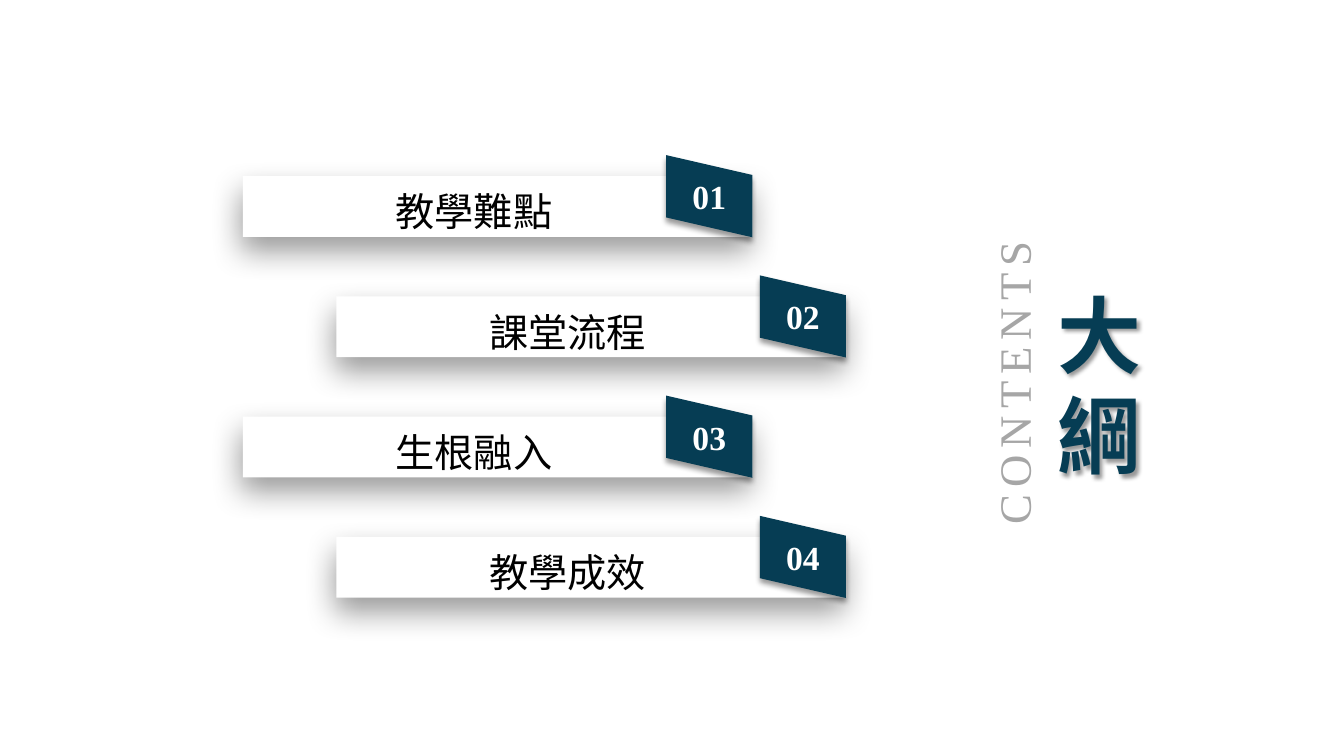
from lxml.etree import SubElement as Sub
from pptx import Presentation
from pptx.dml.color import RGBColor
from pptx.enum.shapes import MSO_SHAPE as Kind
from pptx.enum.text import MSO_ANCHOR as Anchor, PP_ALIGN as Align
from pptx.oxml.ns import qn
from pptx.util import Cm, Pt

NAVY = RGBColor(0x06, 0x3D, 0x54)
WHITE = RGBColor(0xFF, 0xFF, 0xFF)
BLACK = RGBColor(0, 0, 0)
GRAY = RGBColor(0xA6, 0xA6, 0xA6)
SERIF = "Times New Roman"


def write(shape, text, face, size, color, bold=False, align=Align.CENTER):
    """Fill the shape with middle-anchored text in one style."""
    frame = shape.text_frame
    frame.text = text
    frame.vertical_anchor = Anchor.MIDDLE
    for para in frame.paragraphs:
        para.alignment = align
        for run in para.runs:
            font = run.font
            font.size, font.bold, font.name = Pt(size), bold, face
            font.color.rgb = color
            Sub(run._r.get_or_add_rPr(), qn("a:ea"), typeface=face)
    return frame


def shade(shape, blur, dist, angle):
    """Give the shape a black outer shadow at 40 % opacity."""
    shape.shadow.inherit = False
    effect = shape._element.spPr.find(qn("a:effectLst"))
    outer = Sub(effect, qn("a:outerShdw"), blurRad=str(Pt(blur)),
                dist=str(Pt(dist)), dir=str(angle * 60000),
                algn="t", rotWithShape="0")
    tint = Sub(outer, qn("a:srgbClr"), val="000000")
    Sub(tint, qn("a:alpha"), val="40000")


deck = Presentation()
deck.slide_width, deck.slide_height = Cm(33.87), Cm(19.05)
slide = deck.slides.add_slide(deck.slide_layouts[6])

# Agenda bars, every second one indented
topics = ["教學難點", "課堂流程", "生根融入", "教學成效"]
for i, topic in enumerate(topics):
    left, top = 6.12 + 2.36 * (i % 2), 4.44 + 3.03 * i
    group = slide.shapes.add_group_shape()

    bar = group.shapes.add_shape(Kind.RECTANGLE, Cm(left), Cm(top), Cm(12.85), Cm(1.53))
    bar.fill.solid()
    bar.fill.fore_color.rgb = WHITE
    bar.line.fill.background()
    shade(bar, 22, 10, 101)
    frame = write(bar, topic, "Noto Sans CJK TC", 28, BLACK)
    frame.margin_left, frame.margin_right = Cm(0.3), Cm(1.5)
    frame.margin_top = frame.margin_bottom = 0
    frame.paragraphs[0].line_spacing = 1.2

    x, y = left + 10.67, top - 0.53
    pen = group.shapes.build_freeform(Cm(x), Cm(y))
    pen.add_line_segments([(Cm(x + dx), Cm(y + dy)) for dx, dy in
                           [(0, 1.57), (2.17, 2.07), (2.17, 0.5)]])
    tag = pen.convert_to_shape()
    tag.fill.solid()
    tag.fill.fore_color.rgb = NAVY
    tag.line.fill.background()
    shade(tag, 4, 3, 90)
    write(tag, f"{i + 1:02}", SERIF, 24, WHITE, bold=True)

# Sideways caption
side = slide.shapes.add_textbox(Cm(20.73), Cm(8.81), Cm(9.6), Cm(1.68))
side.rotation = 270
frame = write(side, "CONTENTS", SERIF, 32, GRAY)
frame.word_wrap = False
frame.paragraphs[0].runs[0].font._element.set("spc", "500")

# Stacked title
title = slide.shapes.add_textbox(Cm(26.39), Cm(7.82), Cm(1.55), Cm(3.33))
shade(title, 3, 3, 45)
frame = write(title, "大\n綱", "Noto Sans CJK SC", 60, NAVY, bold=True, align=Align.LEFT)
frame.word_wrap = True
frame.margin_top = Cm(0.5)
for para in frame.paragraphs:
    para.line_spacing = Pt(72)

deck.save("out.pptx")
